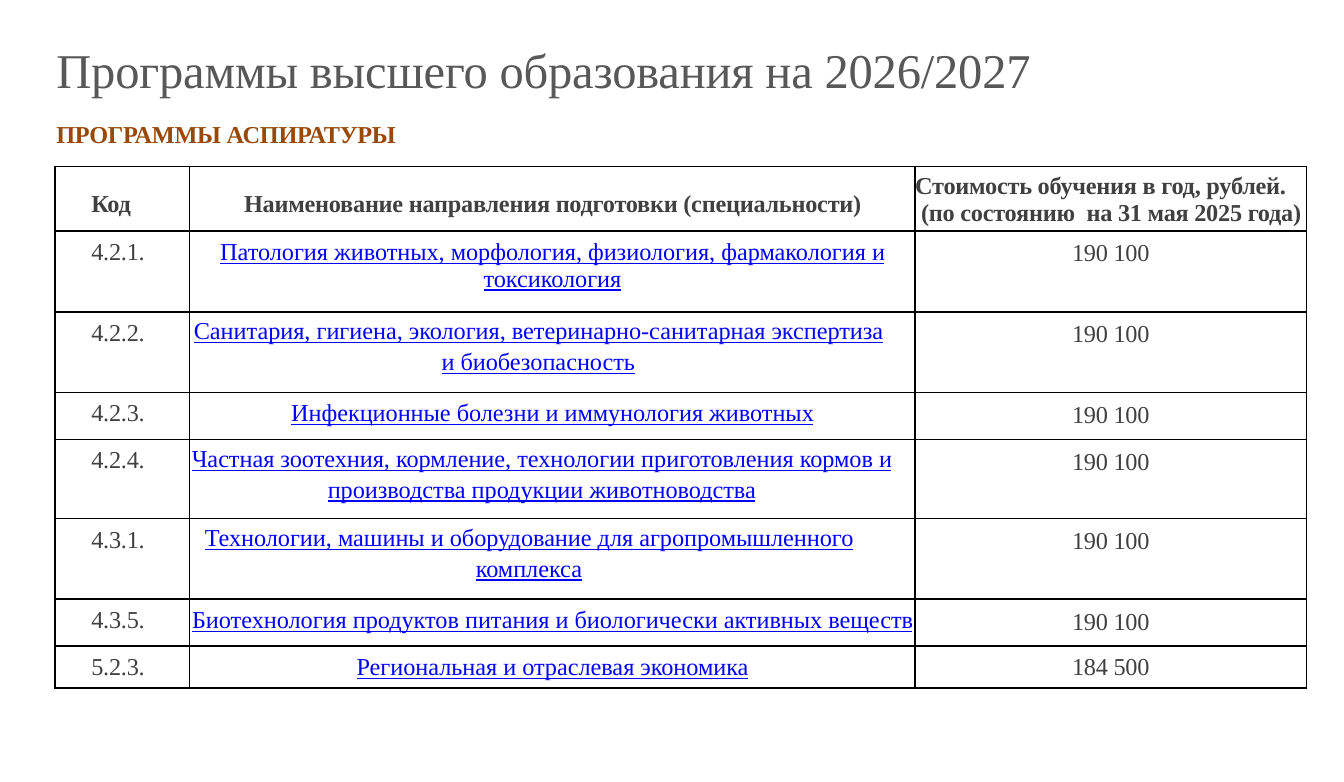
from lxml import etree
from pptx import Presentation
from pptx.dml.color import RGBColor
from pptx.enum import text
from pptx.oxml import ns
from pptx.util import Inches, Pt

FONT = "Times New Roman"
BLACK = RGBColor(0x00, 0x00, 0x00)
GREY = RGBColor(0x58, 0x58, 0x58)
DARK = RGBColor(0x40, 0x40, 0x40)
BROWN = RGBColor(0x98, 0x48, 0x07)
BLUE = RGBColor(0x00, 0x00, 0xFF)

# Content
TITLE = "Программы высшего образования на 2026/2027"
SUBTITLE = "ПРОГРАММЫ АСПИРАТУРЫ"
HEADERS = [
    ["Код"],
    ["Наименование направления подготовки (специальности)"],
    ["Стоимость обучения в год, рублей.", " (по состоянию  на 31 мая 2025 года)"],
]
# code, programme, price, row height, programme margins (l, t, r, b), line spacing
PROGRAMMES = [
    ("4.2.1.", "Патология животных, морфология, физиология, фармакология и токсикология",
     "190 100", 0.6, (0.07, 0.06, 0.07, 0.06), None),
    ("4.2.2.", "Санитария, гигиена, экология, ветеринарно-санитарная экспертиза и биобезопасность",
     "190 100", 0.6, (0, 0.02, 0.21, 0), 1.15),
    ("4.2.3.", "Инфекционные болезни и иммунология животных",
     "190 100", 0.35, (0, 0.06, 0, 0), None),
    ("4.2.4.", "Частная зоотехния, кормление, технологии приготовления кормов и "
     "производства продукции животноводства",
     "190 100", 0.59, (0, 0.02, 0.16, 0), 1.15),
    ("4.3.1.", "Технологии, машины и оборудование для агропромышленного комплекса",
     "190 100", 0.6, (0, 0.02, 0.35, 0), 1.15),
    ("4.3.5.", "Биотехнология продуктов питания и биологически активных веществ",
     "190 100", 0.35, (0, 0.06, 0, 0), None),
    ("5.2.3.", "Региональная и отраслевая экономика",
     "184 500", 0.31, (0, 0.06, 0, 0), None),
]
COLUMN_WIDTHS = [1, 5.4, 2.91]
HEADER_HEIGHT = 0.48
CODE_INDENT = 0.27


def set_margins(target, margins):
    target.margin_left, target.margin_top, target.margin_right, target.margin_bottom = (
        Inches(m) for m in margins)


def write(frame, lines, color, size=13, bold=False, link=False, centred=False,
          indent=0, spacing=None):
    for i, line in enumerate(lines):
        para = frame.paragraphs[0] if i == 0 else frame.add_paragraph()
        para.alignment = text.PP_ALIGN.CENTER if centred else text.PP_ALIGN.LEFT
        para.line_spacing = spacing
        para.font.name, para.font.size = FONT, Pt(size)
        para.font.bold, para.font.underline = bold, link
        para.font.color.rgb = color
        para._p.get_or_add_pPr().set("marL", str(Inches(indent)))
        span = para.add_run()
        span.text = line
        if not link:
            span.font._element.set("spc", "-10")


def add_text(page, line, place, **style):
    box = page.shapes.add_textbox(*(Inches(v) for v in place))
    box.text_frame.word_wrap = True
    set_margins(box.text_frame, (0, 0.01, 0, 0))
    write(box.text_frame, [line], indent=0.01, **style)


def add_borders(cell):
    props = cell._tc.get_or_add_tcPr()
    for i, side in enumerate(("lnL", "lnR", "lnT", "lnB")):
        line = etree.Element(ns.qn(f"a:{side}"), w=str(Pt(1)))
        fill = etree.SubElement(line, ns.qn("a:solidFill"))
        etree.SubElement(fill, ns.qn("a:srgbClr"), val=str(BLACK))
        props.insert(i, line)


def fill_cell(cell, lines, margins, color=DARK, **style):
    cell.fill.background()
    cell.vertical_anchor = text.MSO_ANCHOR.TOP
    set_margins(cell, margins)
    write(cell.text_frame, lines, color, **style)
    add_borders(cell)


deck = Presentation()
deck.slide_width, deck.slide_height = Inches(10), Inches(5.82)
page = deck.slides.add_slide(deck.slide_layouts[6])

# Table grid
heights = [HEADER_HEIGHT] + [row[3] for row in PROGRAMMES]
table = page.shapes.add_table(
    len(heights), len(COLUMN_WIDTHS), Inches(0.41), Inches(1.24),
    Inches(sum(COLUMN_WIDTHS)), Inches(sum(heights))).table
table.first_row = table.horz_banding = False
for column, width in zip(table.columns, COLUMN_WIDTHS):
    column.width = Inches(width)
for row, height in zip(table.rows, heights):
    row.height = Inches(height)

# Header row
for c, lines in enumerate(HEADERS):
    fill_cell(table.cell(0, c), lines, (0, 0.05 if c == 2 else 0.18, 0, 0), bold=True,
              centred=c == 1, indent=CODE_INDENT if c == 0 else 0)

# Programme rows
for r, (code, name, price, _, margins, spacing) in enumerate(PROGRAMMES, 1):
    price_top = 0.06 if r == len(PROGRAMMES) else 0.07
    fill_cell(table.cell(r, 0), [code], (0, 0.06, 0, 0), indent=CODE_INDENT)
    fill_cell(table.cell(r, 1), [name], margins, BLUE, link=True, centred=True, spacing=spacing)
    fill_cell(table.cell(r, 2), [price], (0, price_top, 0, 0), centred=True)

# Headings
add_text(page, TITLE, (0.41, 0.29, 8.85, 0.46), color=GREY, size=26)
add_text(page, SUBTITLE, (0.41, 0.88, 5.7, 0.33), color=BROWN, bold=True)

deck.save("out.pptx")
